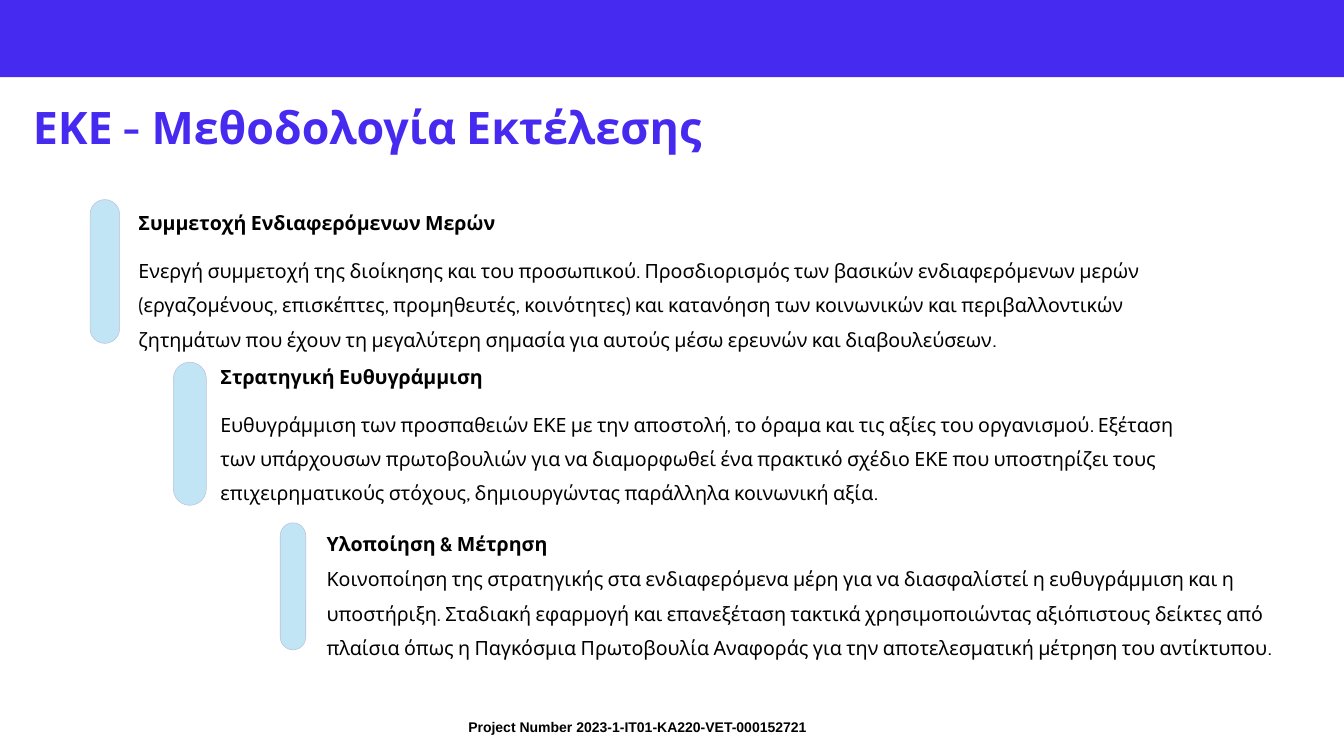
from pptx import Presentation
from pptx.dml.color import RGBColor
from pptx.enum import shapes, text
from pptx.util import Inches, Pt

VIOLET = RGBColor(0x46, 0x2A, 0xF0)
LIGHT_BLUE = RGBColor(0xC1, 0xE5, 0xF5)
PALE_EDGE = RGBColor(0xBB, 0xC2, 0xDC)
BLACK = RGBColor(0, 0, 0)

TITLE = "ΕΚΕ - Μεθοδολογία Εκτέλεσης"
PROJECT = "Project Number 2023-1-IT01-KA220-VET-000152721"
STEPS = [
    {
        "heading": "Συμμετοχή Ενδιαφερόμενων Μερών",
        "body": "Ενεργή συμμετοχή της διοίκησης και του προσωπικού. Προσδιορισμός των βασικών "
                "ενδιαφερόμενων μερών (εργαζομένους, επισκέπτες, προμηθευτές, κοινότητες) και "
                "κατανόηση των κοινωνικών και περιβαλλοντικών ζητημάτων που έχουν τη μεγαλύτερη "
                "σημασία για αυτούς μέσω ερευνών και διαβουλεύσεων.",
        "bar": (1.34, 2.97, 0.44, 2.14),
        "left": 2.06, "top": 2.97, "body_offset": 0.72, "width": 15.25, "height": 2.05,
    },
    {
        "heading": "Στρατηγική Ευθυγράμμιση",
        "body": "Ευθυγράμμιση των προσπαθειών ΕΚΕ με την αποστολή, το όραμα και τις αξίες του "
                "οργανισμού. Εξέταση των υπάρχουσων πρωτοβουλιών για να διαμορφωθεί ένα πρακτικό "
                "σχέδιο ΕΚΕ που υποστηρίζει τους επιχειρηματικούς στόχους, δημιουργώντας παράλληλα "
                "κοινωνική αξία.",
        "bar": (2.58, 5.39, 0.49, 2.13),
        "left": 3.28, "top": 5.26, "body_offset": 0.72, "width": 14.63, "height": 1.54,
    },
    {
        "heading": "Υλοποίηση & Μέτρηση",
        "body": "Κοινοποίηση της στρατηγικής στα ενδιαφερόμενα μέρη για να διασφαλίστεί η "
                "ευθυγράμμιση και η υποστήριξη. Σταδιακή εφαρμογή και επανεξέταση τακτικά "
                "χρησιμοποιώντας αξιόπιστους δείκτες από πλαίσια όπως η Παγκόσμια Πρωτοβουλία "
                "Αναφοράς για την αποτελεσματική μέτρηση του αντίκτυπου.",
        "bar": (4.17, 7.78, 0.38, 1.89),
        "left": 4.86, "top": 7.75, "body_offset": 0.53, "width": 14.63, "height": 2.05,
    },
]
HEADING_HEIGHT = 0.53


def add_block(slide, box, wording, size, color=BLACK, font="Cabin", bold=False,
              spacing=None, inset=(0, 0), wrap=True, anchor=text.MSO_ANCHOR.TOP):
    frame = slide.shapes.add_textbox(*map(Inches, box)).text_frame
    frame.word_wrap = wrap
    frame.vertical_anchor = anchor
    frame.margin_left = frame.margin_right = Inches(inset[0])
    frame.margin_top = frame.margin_bottom = Inches(inset[1])
    paragraph = frame.paragraphs[0]
    paragraph.line_spacing = spacing
    run = paragraph.add_run()
    run.text = wording
    run.font.name = font
    run.font.size = Pt(size)
    run.font.bold = bold
    run.font.color.rgb = color


def add_panel(slide, kind, box, fill):
    panel = slide.shapes.add_shape(kind, *map(Inches, box))
    panel.shadow.inherit = False
    panel.fill.solid()
    panel.fill.fore_color.rgb = fill
    panel.line.fill.background()
    return panel


def add_step(slide, step):
    bar = add_panel(slide, shapes.MSO_SHAPE.ROUNDED_RECTANGLE, step["bar"], LIGHT_BLUE)
    bar.adjustments[0] = 0.56
    bar.line.color.rgb = PALE_EDGE
    bar.line.width = Pt(0.6)
    left, top, width = step["left"], step["top"], step["width"]
    add_block(slide, (left, top, width, HEADING_HEIGHT), step["heading"], 21,
              bold=True, spacing=Pt(37.5))
    add_block(slide, (left, top + step["body_offset"], width, step["height"]), step["body"], 21,
              spacing=Pt(36.8))


def main():
    deck = Presentation()
    deck.slide_width, deck.slide_height = Inches(20), Inches(11.25)
    slide = deck.slides.add_slide(deck.slide_layouts[6])

    add_block(slide, (6.87, 10.65, 5.31, 0.35), PROJECT, 15, font="Arial", bold=True,
              inset=(0.1, 0.05), wrap=False)
    add_panel(slide, shapes.MSO_SHAPE.RECTANGLE, (0, -0.02, 20, 1.17), VIOLET)
    add_block(slide, (0.39, 1.2, 17.25, 1.46), TITLE, 48, color=VIOLET, bold=True,
              spacing=0.9, inset=(0.1, 0.05), anchor=text.MSO_ANCHOR.MIDDLE)
    for step in STEPS:
        add_step(slide, step)

    deck.save("out.pptx")


if __name__ == "__main__":
    main()
